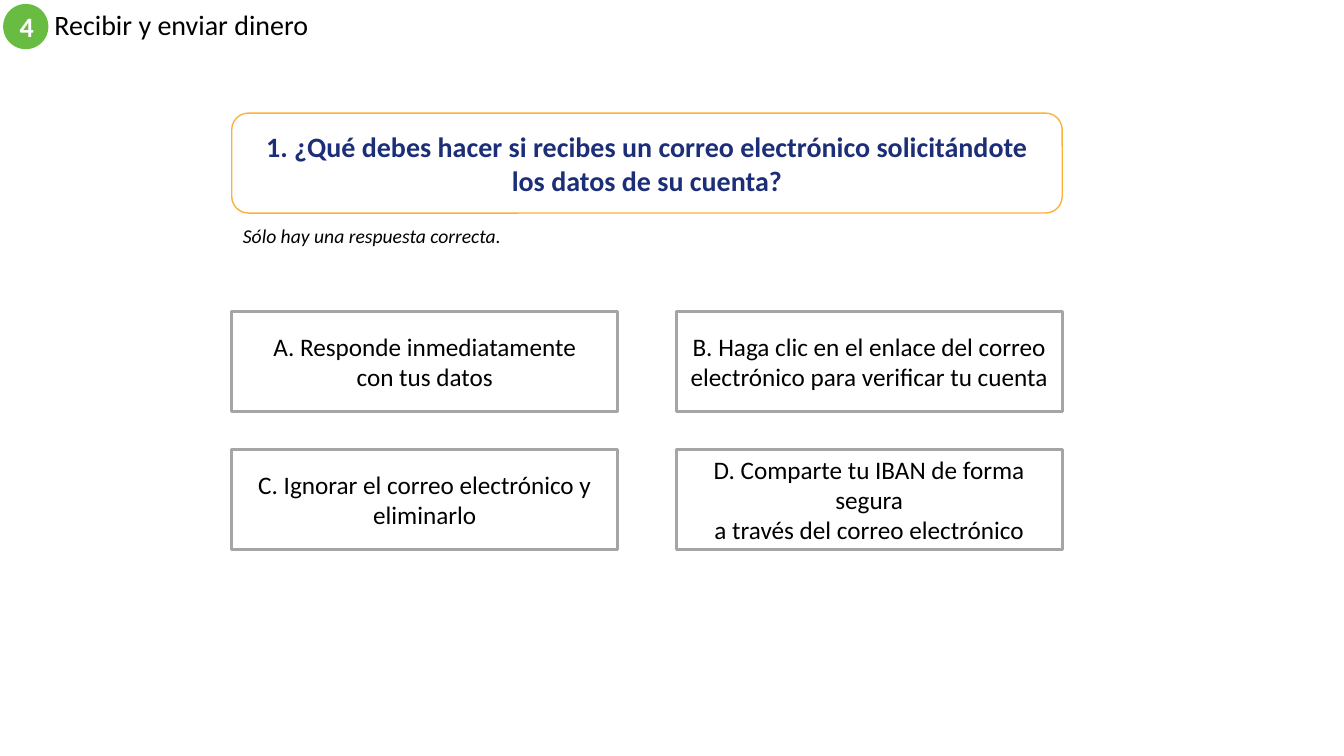
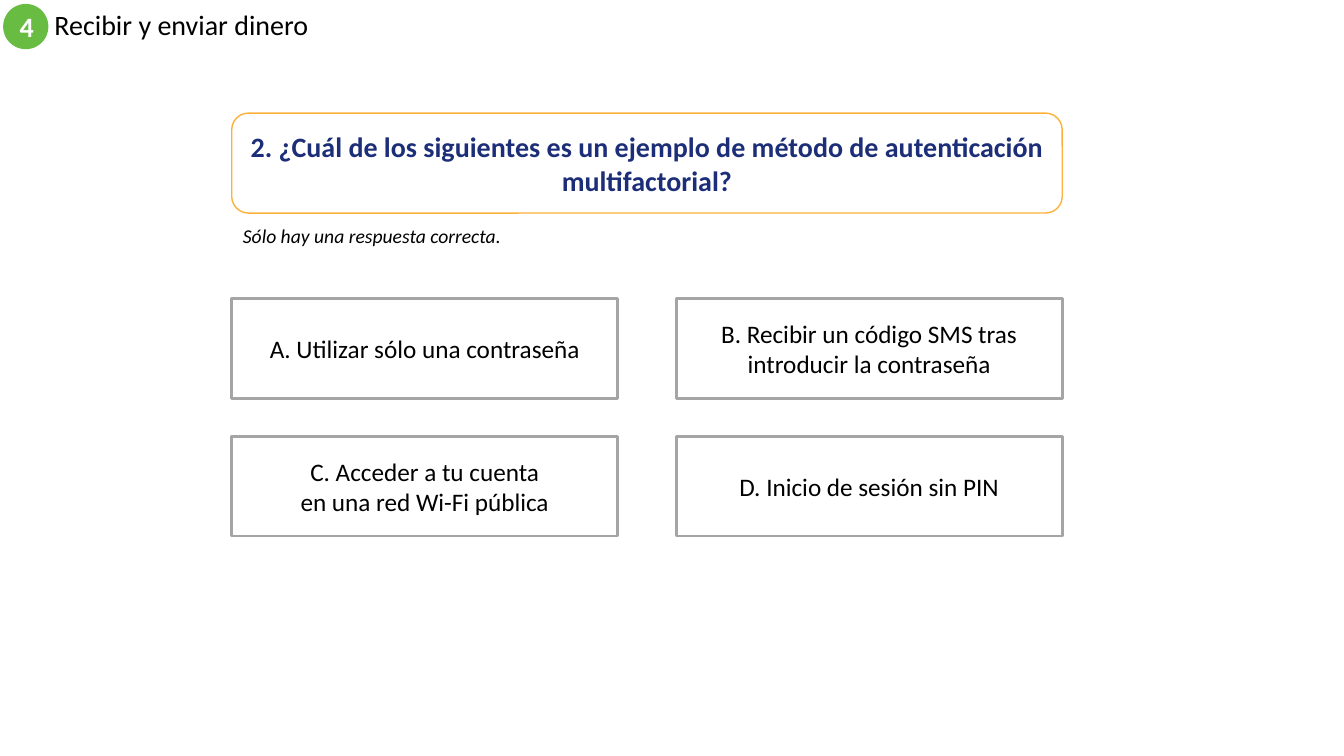
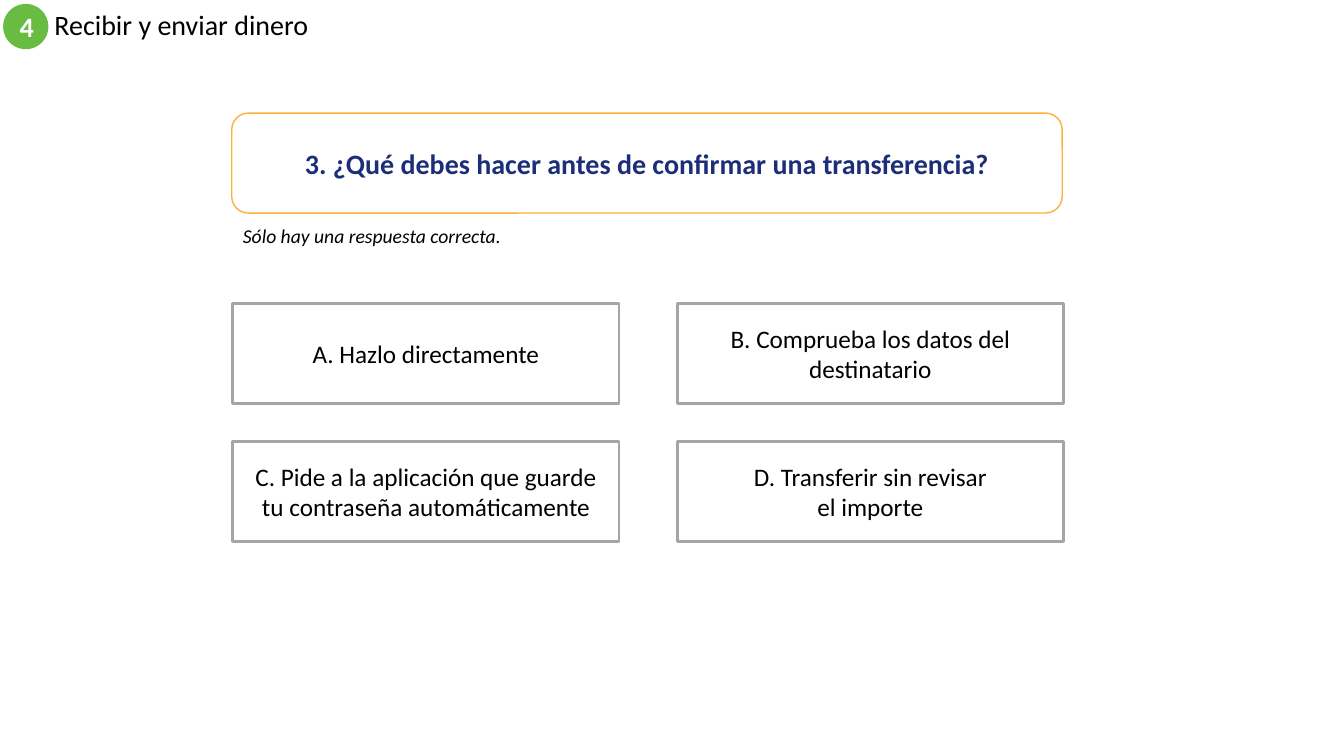
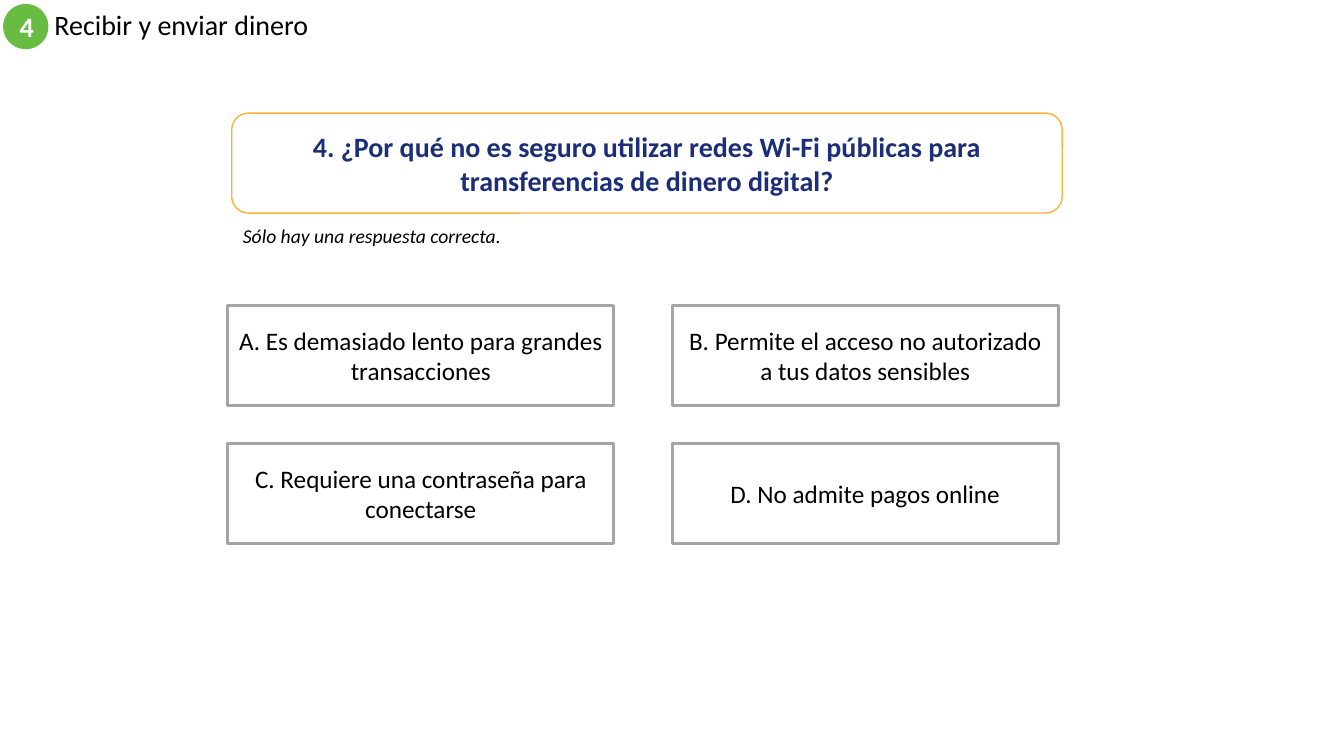
from pptx import Presentation
from pptx.dml.color import RGBColor
from pptx.enum.shapes import MSO_SHAPE as Form
from pptx.enum.text import MSO_ANCHOR as Anchor, MSO_AUTO_SIZE as Fit, PP_ALIGN as Align
from pptx.util import Cm, Pt

GREEN = RGBColor(0x68, 0xBC, 0x42)
AMBER = RGBColor(0xFC, 0xB1, 0x3A)
NAVY = RGBColor(0x1C, 0x2E, 0x78)
GREY = RGBColor(0xA5, 0xA5, 0xA5)
BLACK = RGBColor(0, 0, 0)
WHITE = RGBColor(0xFF, 0xFF, 0xFF)

BADGE = {"size": Pt(20), "bold": True, "color": WHITE}
TITLE = {"size": Pt(20), "color": BLACK}
ASK = {"size": Pt(20), "bold": True, "color": NAVY}
HINT = {"size": Pt(14), "italic": True, "color": BLACK}
REPLY = {"size": Pt(18), "color": BLACK}

# Question, left and top of the answer grid, answers
QUIZ = [
    ("1. ¿Qué debes hacer si recibes un correo electrónico solicitándote los datos de su cuenta?",
     5.84, 7.85,
     ["A. Responde inmediatamente\ncon tus datos",
      "B. Haga clic en el enlace del correo electrónico para verificar tu cuenta",
      "C. Ignorar el correo electrónico y eliminarlo",
      "D. Comparte tu IBAN de forma segura\na través del correo electrónico"]),
    ("2. ¿Cuál de los siguientes es un ejemplo de método de autenticación multifactorial?",
     5.84, 7.52,
     ["A. Utilizar sólo una contraseña",
      "B. Recibir un código SMS tras introducir la contraseña",
      "C. Acceder a tu cuenta\nen una red Wi-Fi pública",
      "D. Inicio de sesión sin PIN"]),
    ("3. ¿Qué debes hacer antes de confirmar una transferencia?",
     5.87, 7.65,
     ["A. Hazlo directamente",
      "B. Comprueba los datos del destinatario",
      "C. Pide a la aplicación que guarde tu contraseña automáticamente",
      "D. Transferir sin revisar\nel importe"]),
    ("4. ¿Por qué no es seguro utilizar redes Wi-Fi públicas para transferencias de dinero digital?",
     5.74, 7.7,
     ["A. Es demasiado lento para grandes transacciones",
      "B. Permite el acceso no autorizado a tus datos sensibles",
      "C. Requiere una contraseña para conectarse",
      "D. No admite pagos online"]),
]


def write(shape, text, style, align=Align.LEFT, anchor=Anchor.MIDDLE):
    frame = shape.text_frame
    frame.word_wrap = True
    frame.vertical_anchor = anchor
    para = frame.paragraphs[0]
    para.text = text
    para.alignment = align
    for run in para.runs:
        run.font.name = "Calibri"
        for key, value in style.items():
            if key == "color":
                run.font.color.rgb = value
            else:
                setattr(run.font, key, value)
    return frame


def label(slide, box, text, style, **place):
    area = slide.shapes.add_textbox(*map(Cm, box))
    return write(area, text, style, **place)


def panel(slide, form, box, text, style, fill=WHITE, line=None, width=1):
    """Filled shape with centred text and an optional outline."""
    shape = slide.shapes.add_shape(form, *map(Cm, box))
    shape.shadow.inherit = False
    shape.fill.solid()
    shape.fill.fore_color.rgb = fill
    if line is None:
        shape.line.fill.background()
    else:
        shape.line.color.rgb = line
        shape.line.width = Pt(width)
    write(shape, text, style, Align.CENTER)


def header(slide, left, top, size):
    panel(slide, Form.OVAL, (left, top, size, size), "4", BADGE, GREEN)
    frame = label(slide, (left + 1.04, top, 20.32, size), "Recibir y enviar dinero", TITLE)
    frame.paragraphs[0].line_spacing = 0.9


def question(slide, left, top, width, height, text):
    panel(slide, Form.ROUNDED_RECTANGLE, (left, top, width, height), text, ASK, line=AMBER)
    frame = label(slide, (left + 0.03, top + height + 0.15, 7.5, 0.86),
                  "Sólo hay una respuesta correcta.", HINT, anchor=Anchor.TOP)
    frame.auto_size = Fit.SHAPE_TO_FIT_TEXT


def answers(slide, left, top, texts, width=9.73, height=2.52, gapx=1.47, gapy=0.95):
    for i, text in enumerate(texts):
        row, col = divmod(i, 2)
        box = (left + col * (width + gapx), top + row * (height + gapy), width, height)
        panel(slide, Form.RECTANGLE, box, text, REPLY, line=GREY, width=2)


def main():
    deck = Presentation()
    deck.slide_width, deck.slide_height = Cm(33.87), Cm(19.05)
    blank = deck.slide_layouts[6]
    for ask, left, top, texts in QUIZ:
        slide = deck.slides.add_slide(blank)
        header(slide, 0.08, 0.1, 1.14)
        question(slide, 5.84, 2.85, 20.93, 2.52, ask)
        answers(slide, left, top, texts)
    deck.save("out.pptx")


if __name__ == "__main__":
    main()
